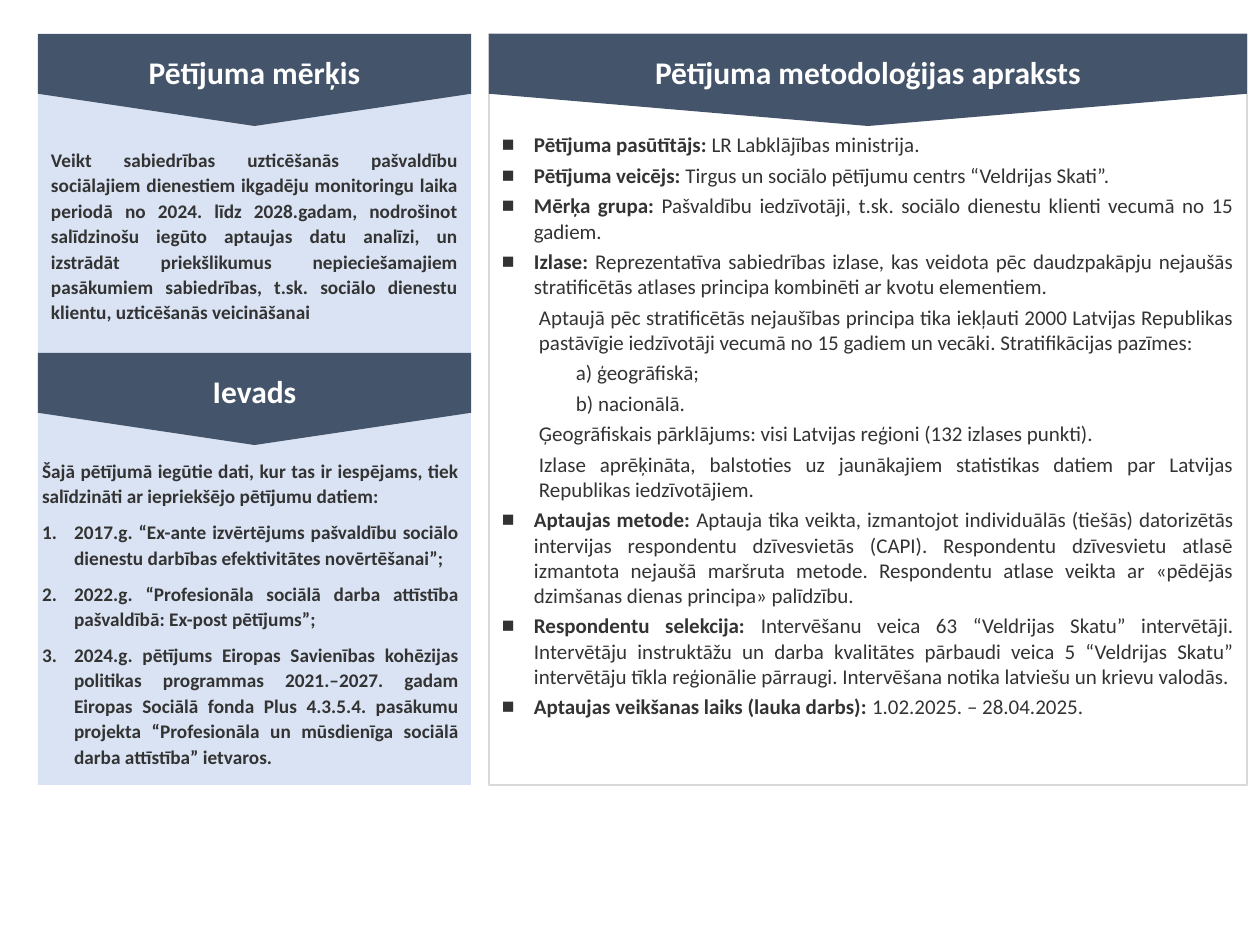
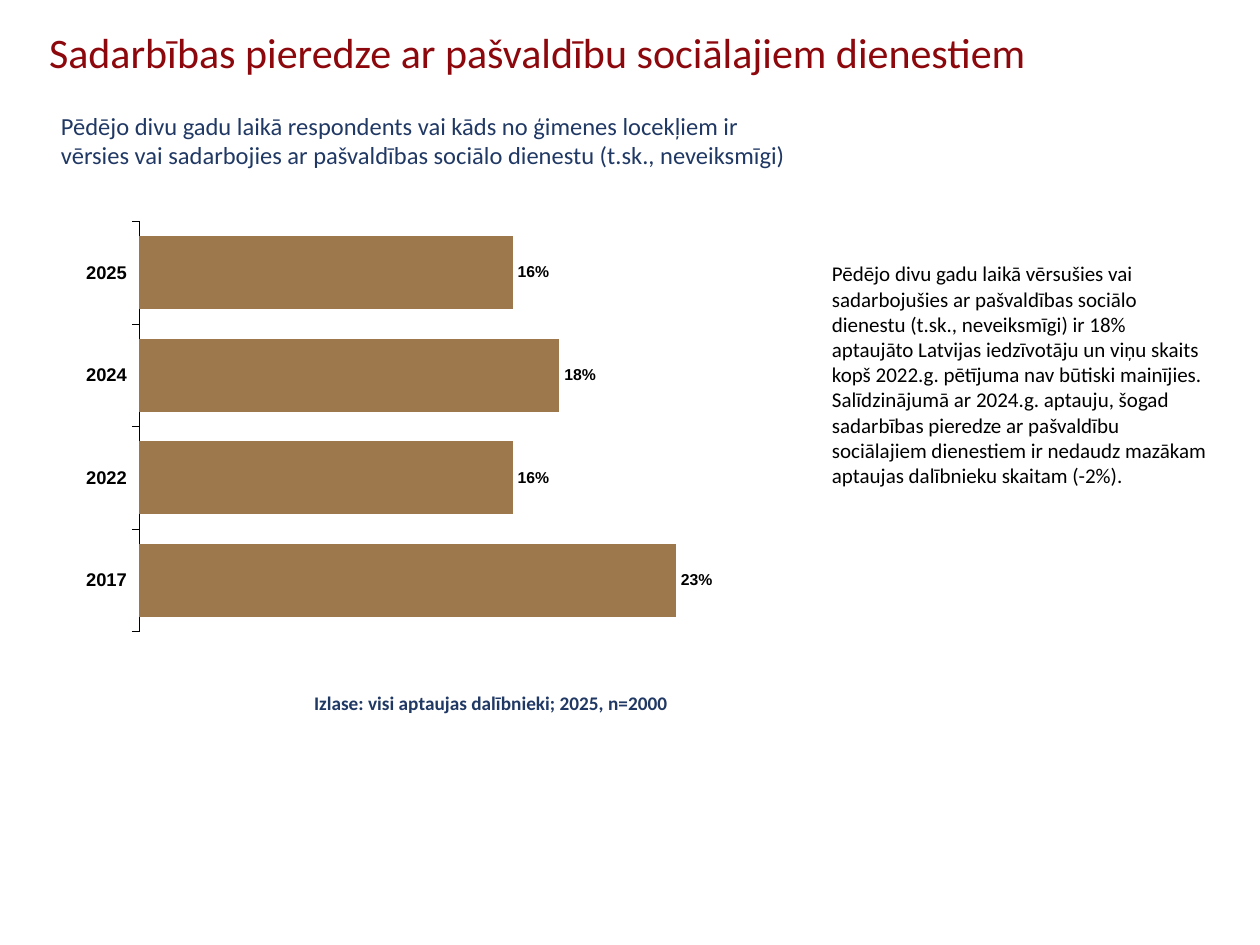
from pptx import Presentation
from pptx import util as u
from pptx.chart.data import CategoryChartData
from pptx.dml.color import RGBColor
from pptx.enum import chart as ch, shapes, text
from pptx.oxml import parse_xml
from pptx.oxml.ns import nsdecls, qn
from lxml import etree

PX = 914400 // 126
FONT = "Calibri"
SLATE, PALE, WHITE, GREY = "44546A", "DAE3F3", "FFFFFF", "D9D9D9"
INK, BLACK, NAVY, RED, BROWN = "333333", "000000", "203864", "8C080C", "9E784D"
LEFT, JUST, MID, RIGHT = (text.PP_ALIGN.LEFT, text.PP_ALIGN.JUSTIFY,
                          text.PP_ALIGN.CENTER, text.PP_ALIGN.RIGHT)
PAD = 13      # side inset of every text frame
HANG = 32     # hanging indent of list items
SUB, DEEP = 37, 74

GOAL = ("Veikt sabiedrības uzticēšanās pašvaldību sociālajiem dienestiem ikgadēju "
        "monitoringu laika periodā no 2024. līdz 2028.gadam, nodrošinot salīdzinošu "
        "iegūto aptaujas datu analīzi, un izstrādāt priekšlikumus nepieciešamajiem "
        "pasākumiem sabiedrības, t.sk. sociālo dienestu klientu, uzticēšanās veicināšanai")

INTRO = [
    "Šajā pētījumā iegūtie dati, kur tas ir iespējams, tiek salīdzināti ar iepriekšējo "
    "pētījumu datiem:",
    "2017.g. “Ex-ante izvērtējums pašvaldību sociālo dienestu darbības efektivitātes "
    "novērtēšanai”;",
    "2022.g. “Profesionāla sociālā darba attīstība pašvaldībā: Ex-post pētījums”;",
    "2024.g. pētījums Eiropas Savienības kohēzijas politikas programmas 2021.–2027. gadam "
    "Eiropas Sociālā fonda Plus 4.3.5.4. pasākumu projekta “Profesionāla un mūsdienīga "
    "sociālā darba attīstība” ietvaros.",
]

# Bold label and text for a bulleted item, or indent and text for a plain one
METHOD = [
    ("Pētījuma pasūtītājs: ", "LR Labklājības ministrija."),
    ("Pētījuma veicējs: ", "Tirgus un sociālo pētījumu centrs “Veldrijas Skati”."),
    ("Mērķa grupa: ", "Pašvaldību iedzīvotāji, t.sk. sociālo dienestu klienti vecumā no "
                      "15 gadiem."),
    ("Izlase: ", "Reprezentatīva sabiedrības izlase, kas veidota pēc daudzpakāpju nejaušās "
                 "stratificētās atlases principa kombinēti ar kvotu elementiem."),
    (SUB, "Aptaujā pēc stratificētās nejaušības principa tika iekļauti 2000 Latvijas "
          "Republikas pastāvīgie iedzīvotāji vecumā no 15 gadiem un vecāki. "
          "Stratifikācijas pazīmes:"),
    (DEEP, "a) ģeogrāfiskā;"),
    (DEEP, "b) nacionālā."),
    (SUB, "Ģeogrāfiskais pārklājums: visi Latvijas reģioni (132 izlases punkti)."),
    (SUB, "Izlase aprēķināta, balstoties uz jaunākajiem statistikas datiem par Latvijas "
          "Republikas iedzīvotājiem."),
    ("Aptaujas metode: ", "Aptauja tika veikta, izmantojot individuālās (tiešās) "
                          "datorizētās intervijas respondentu dzīvesvietās (CAPI). "
                          "Respondentu dzīvesvietu atlasē izmantota nejaušā maršruta metode. "
                          "Respondentu atlase veikta ar «pēdējās dzimšanas dienas principa» "
                          "palīdzību."),
    ("Respondentu selekcija: ", "Intervēšanu veica 63 “Veldrijas Skatu” intervētāji. "
                                "Intervētāju instruktāžu un darba kvalitātes pārbaudi veica "
                                "5 “Veldrijas Skatu” intervētāju tīkla reģionālie pārraugi. "
                                "Intervēšana notika latviešu un krievu valodās."),
    ("Aptaujas veikšanas laiks (lauka darbs): ", "1.02.2025. – 28.04.2025."),
]

QUERY = ("Pēdējo divu gadu laikā respondents vai kāds no ģimenes locekļiem ir vērsies vai "
         "sadarbojies ar pašvaldības sociālo dienestu (t.sk., neveiksmīgi)")
NOTE = ("Pēdējo divu gadu laikā vērsušies vai sadarbojušies ar pašvaldības sociālo dienestu "
        "(t.sk., neveiksmīgi) ir 18% aptaujāto Latvijas iedzīvotāju un viņu skaits kopš "
        "2022.g. pētījuma nav būtiski mainījies. Salīdzinājumā ar 2024.g. aptauju, šogad "
        "sadarbības pieredze ar pašvaldību sociālajiem dienestiem ir nedaudz mazākam "
        "aptaujas dalībnieku skaitam (-2%).")
RATES = {"2017": 0.23, "2022": 0.16, "2024": 0.18, "2025": 0.16}


def px(*nums):
    return [round(n * PX) for n in nums]


def rgb(code):
    return RGBColor.from_string(code)


def paint(font, size, color, bold=False, name=FONT):
    font.name, font.size, font.bold = name, u.Pt(size), bold
    font.color.rgb = rgb(color)


def place(shape, box):
    shape.left, shape.top, shape.width, shape.height = px(*box)


def setup(frame, top=6, anchor=text.MSO_ANCHOR.TOP):
    frame.word_wrap = True
    frame.auto_size = text.MSO_AUTO_SIZE.NONE
    frame.vertical_anchor = anchor
    frame.margin_left, frame.margin_right = px(PAD, PAD)
    frame.margin_top, frame.margin_bottom = px(top, 6)


def mark(para, left, hang=0, bullet=None):
    """Set the indents and the bullet: '#' numbers, None is bare."""
    props = para._p.get_or_add_pPr()
    props.set("marL", str(left * PX))
    props.set("indent", str(-hang * PX))
    if bullet is None:
        etree.SubElement(props, qn("a:buNone"))
    elif bullet == "#":
        etree.SubElement(props, qn("a:buFont"), typeface="+mj-lt")
        etree.SubElement(props, qn("a:buAutoNum"), type="arabicPeriod")
    else:
        tint = etree.SubElement(props, qn("a:buClr"))
        etree.SubElement(tint, qn("a:srgbClr"), val=INK)
        etree.SubElement(props, qn("a:buFont"), typeface="Arial")
        etree.SubElement(props, qn("a:buChar"), char=bullet)


def space(para, index, gap, lead, align=JUST):
    para.alignment = align
    para.space_before = u.Pt(gap if index else 0)
    para.line_spacing = lead


def write(frame, words, size, color, bold=False, align=LEFT, lead=1.0):
    frame.text = words
    para = frame.paragraphs[0]
    space(para, 0, 0, lead, align)
    paint(para.runs[0].font, size, color, bold)


def panel(slide, box, kind, fill):
    shape = slide.shapes.add_shape(kind, *px(*box))
    shape.shadow.inherit = False
    shape.fill.solid()
    shape.fill.fore_color.rgb = rgb(fill)
    shape.line.fill.background()
    return shape


def banner(slide, box, words):
    """Draw a heading band that points down: a pentagon turned by 90 degrees."""
    left, top, wide, high = box
    turned = (left + (wide - high) / 2, top + (high - wide) / 2, high, wide)
    shape = panel(slide, turned, shapes.MSO_SHAPE.PENTAGON, SLATE)
    shape.rotation = 90
    shape.adjustments[0] = 0.35
    frame = shape.text_frame
    frame.vertical_anchor = text.MSO_ANCHOR.MIDDLE
    frame._txBody.bodyPr.set("vert", "vert270")
    write(frame, words, 18, WHITE, True, MID)


def label(slide, box, words, size, color, bold=False, align=LEFT):
    frame = slide.shapes.add_textbox(*px(*box)).text_frame
    setup(frame)
    write(frame, words, size, color, bold, align)


def goal(slide, box):
    shape = panel(slide, box, shapes.MSO_SHAPE.RECTANGLE, PALE)
    tree = slide.shapes._spTree
    tree.remove(shape._element)
    tree.insert(2, shape._element)   # behind the placeholders
    setup(shape.text_frame, 63)
    write(shape.text_frame, GOAL, 11, INK, True, JUST, 1.1)


def intro(holder, box):
    place(holder, box)
    frame = holder.text_frame
    frame.text = "\n".join(INTRO)
    setup(frame)
    for i, para in enumerate(frame.paragraphs):
        if i:
            mark(para, HANG, HANG, "#")
        else:
            mark(para, 0)
        space(para, i, 6, 1.1)
        paint(para.runs[0].font, 11, INK, True)


def method(holder, box):
    place(holder, box)
    holder.fill.solid()
    holder.fill.fore_color.rgb = rgb(WHITE)
    holder.line.color.rgb = rgb(GREY)
    holder.line.width = u.Pt(1)
    frame = holder.text_frame
    setup(frame, 98)
    for i, (head, words) in enumerate(METHOD):
        para = frame.add_paragraph() if i else frame.paragraphs[0]
        if isinstance(head, str):
            mark(para, HANG, HANG, "■")
            run = para.add_run()
            run.text = head
            paint(run.font, 12, INK, True)
        else:
            mark(para, head)
        run = para.add_run()
        run.text = words
        paint(run.font, 12, INK)
        space(para, i, 3, 1.0)


def bars(slide, box):
    data = CategoryChartData(number_format="0%")
    data.categories = list(RATES)
    data.add_series("Series 1", list(RATES.values()))
    chart = slide.shapes.add_chart(
        ch.XL_CHART_TYPE.BAR_CLUSTERED, *px(*box), data).chart
    chart.has_legend = chart.has_title = False
    paint(chart.font, 12, BLACK, name="Arial")

    plot = chart.plots[0]
    plot.gap_width, plot.vary_by_categories = 40, False
    fill = plot.series[0].format.fill
    fill.solid()
    fill.fore_color.rgb = rgb(BROWN)
    plot.has_data_labels = True
    tags = plot.data_labels
    tags.show_value = True
    tags.number_format, tags.number_format_is_linked = "0%", False
    tags.position = ch.XL_LABEL_POSITION.OUTSIDE_END
    paint(tags.font, 9, BLACK, True, "Arial")

    years, rate = chart.category_axis, chart.value_axis
    years.major_tick_mark = ch.XL_TICK_MARK.OUTSIDE
    years.format.line.color.rgb = rgb(BLACK)
    years.format.line.width = u.Pt(0.25)
    paint(years.tick_labels.font, 10.5, BLACK, True, "Arial")
    rate.minimum_scale, rate.maximum_scale, rate.major_unit = 0, 0.3, 0.1
    rate.has_major_gridlines = rate.visible = False
    inset(chart, x=0.1, y=0.03, w=0.86, h=0.92)


def inset(chart, **parts):
    """Fix the inner plot area as fractions of the chart."""
    area = chart._chartSpace.find(".//" + qn("c:plotArea"))
    for old in area.findall(qn("c:layout")):
        area.remove(old)
    modes = '<c:xMode val="edge"/><c:yMode val="edge"/>'
    sizes = "".join(f'<c:{key} val="{val}"/>' for key, val in parts.items())
    area.insert(0, parse_xml(
        f'<c:layout {nsdecls("c")}><c:manualLayout><c:layoutTarget val="inner"/>'
        f"{modes}{sizes}</c:manualLayout></c:layout>"))


def design(deck):
    slide = deck.slides.add_slide(deck.slide_layouts[3])
    title, first, second = slide.placeholders
    title._element.getparent().remove(title._element)
    goal(slide, (38, 83, 433, 702))
    intro(first, (29, 451, 443, 334))
    method(second, (489, 34, 758, 751))
    for left, top, wide, words in (
            (38, 34, 433, "Pētījuma mērķis"),
            (38, 353, 433, "Ievads"),
            (489, 34, 758, "Pētījuma metodoloģijas apraksts")):
        banner(slide, (left, top, wide, 92), words)


def results(deck):
    slide = deck.slides.add_slide(deck.slide_layouts[5])
    title = slide.shapes.title
    place(title, (36, 20, 1201, 63))
    setup(title.text_frame)
    write(title.text_frame, "Sadarbības pieredze ar pašvaldību sociālajiem dienestiem",
          24, RED)
    bars(slide, (58, 208, 814, 446))
    label(slide, (48, 105, 771, 72), QUERY, 14, NAVY)
    label(slide, (819, 255, 402, 242), NOTE, 12, BLACK)
    label(slide, (293, 685, 388, 37), "Izlase: visi aptaujas dalībnieki; 2025, n=2000",
          11, NAVY, True, RIGHT)


def main():
    deck = Presentation()
    deck.slide_width, deck.slide_height = px(1260, 945)
    design(deck)
    results(deck)
    deck.save("out.pptx")


if __name__ == "__main__":
    main()
